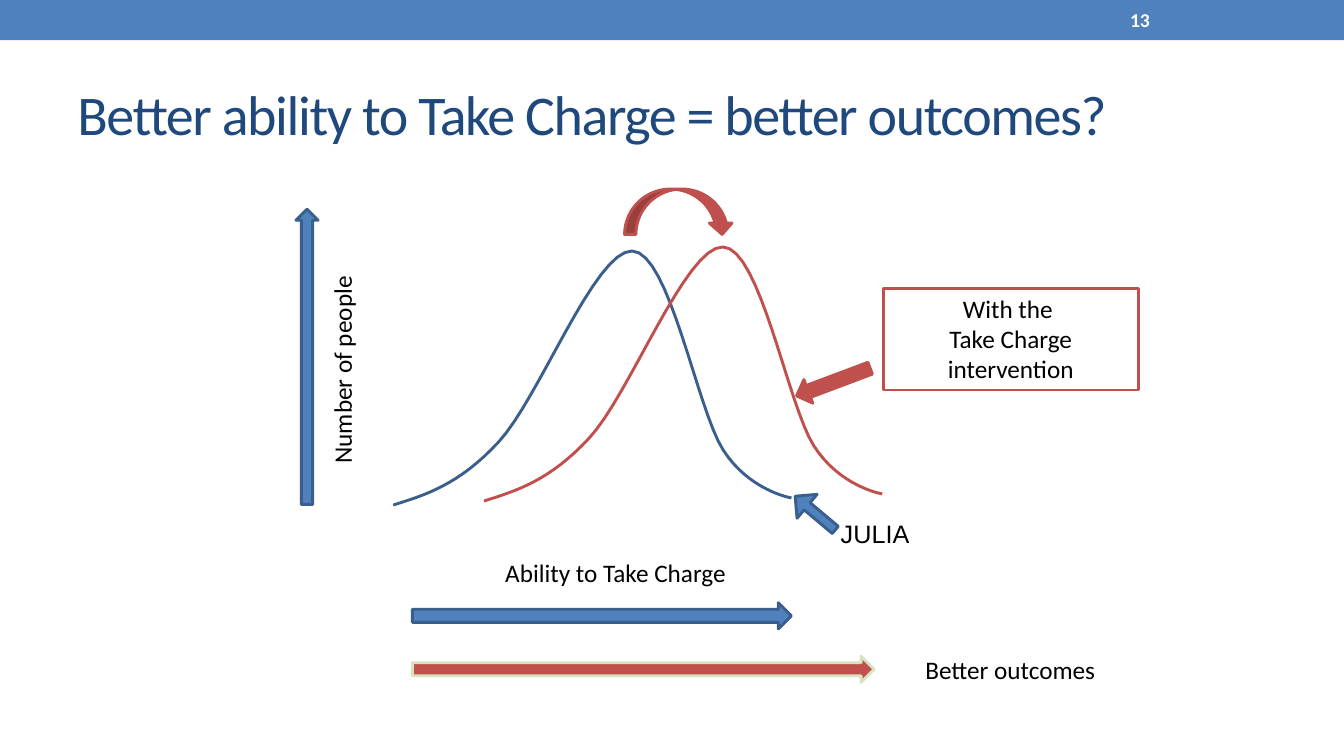
from dataclasses import dataclass

from pptx import Presentation
from pptx.dml.color import RGBColor as Rgb
from pptx.enum.shapes import MSO_SHAPE as Kind
from pptx.enum.text import MSO_ANCHOR as Anchor, PP_ALIGN as Align
from pptx.util import Inches, Pt

BLUE, NAVY, RED, LIME = "4F81BD", "3A5F8C", "C0504D", "D7E4BD"
BLACK, WHITE, TITLE = "000000", "FFFFFF", "1F497D"
STEPS = 16
SHIFT = (0.9, -0.04)
BELL = [
    (3.9, 5.01), (4.22, 4.91), (4.55, 4.81), (4.94, 4.39),
    (5.34, 3.97), (5.9, 2.48), (6.27, 2.49),
    (6.64, 2.5), (6.91, 4.05), (7.17, 4.46),
    (7.43, 4.87), (7.85, 4.94), (7.85, 4.94),
]

Box = tuple[float, float, float, float]
Point = tuple[float, float]


@dataclass
class Arrow:
    kind: Kind
    box: Box
    fill: str
    line: str
    turn: float = 0
    bend: tuple[float, ...] = ()


@dataclass
class Label:
    box: Box
    lines: tuple[str, ...]
    align: Align = Align.LEFT
    font: str = "Calibri"
    size: float = 18
    color: str = BLACK
    bold: bool = False
    turn: float = 0
    anchor: Anchor = Anchor.TOP
    track: int = 0
    edge: str = ""


ARROWS = [
    Arrow(Kind.RIGHT_ARROW, (4.09, 5.98, 3.76, 0.26), BLUE, NAVY),
    Arrow(Kind.DOWN_ARROW, (8.14, 3.4, 0.25, 0.78), RED, RED, 69.4),
    Arrow(Kind.RIGHT_ARROW, (4.09, 6.51, 4.58, 0.26), RED, LIME),
    Arrow(Kind.CURVED_LEFT_ARROW, (6.51, 1.56, 0.45, 1.08), RED, RED, 270),
    Arrow(Kind.RIGHT_ARROW, (1.58, 3.43, 2.93, 0.22), BLUE, NAVY, 270),
    Arrow(Kind.DOWN_ARROW, (7.93, 4.83, 0.31, 0.52), BLUE, NAVY, 130, (0.3, 0.5)),
]
LABELS = [
    Label((0.67, 0.58, 12, 1.08), ("Better ability to Take Charge = better outcomes?",),
          size=40, color=TITLE, anchor=Anchor.MIDDLE, track=-100),
    Label((4.57, 5.48, 3.07, 0.4), ("Ability to Take Charge",), Align.CENTER),
    Label((8.76, 2.86, 2.53, 1.01), ("With the ", "Take Charge intervention"),
          Align.CENTER, edge=RED),
    Label((9.08, 6.44, 2.21, 0.4), ("Better outcomes",)),
    Label((11.11, 0.02, 1.56, 0.36), ("13",), size=14, color=WHITE, bold=True,
          anchor=Anchor.MIDDLE),
    Label((2.04, 3.47, 2.7, 0.4), ("Number of people",), Align.CENTER, turn=270),
    Label((8.24, 5.09, 1.28, 0.4), ("JULIA",), font="Arial"),
]


def paint(hue: str) -> Rgb:
    return Rgb.from_string(hue)


def place(box: Box) -> list[Inches]:
    return [Inches(side) for side in box]


def stroke(shape, hue: str, width: float = 2.08) -> None:
    shape.line.color.rgb = paint(hue)
    shape.line.width = Pt(width)


def trace(knots: list[Point]) -> list[Point]:
    spots = [knots[0]]
    for start in range(0, len(knots) - 1, 3):
        a, b, c, d = knots[start:start + 4]
        for step in range(1, STEPS + 1):
            t = step / STEPS
            u = 1 - t
            spots.append(tuple(
                u**3 * p + 3 * u * u * t * q + 3 * u * t * t * r + t**3 * s
                for p, q, r, s in zip(a, b, c, d)
            ))
    return spots


def draw_curve(slide, hue: str, shift: Point) -> None:
    spots = [(Inches(x + shift[0]), Inches(y + shift[1])) for x, y in trace(BELL)]
    pen = slide.shapes.build_freeform(*spots[0])
    pen.add_line_segments(spots[1:], close=False)
    curve = pen.convert_to_shape()
    curve.shadow.inherit = False
    curve.fill.background()
    stroke(curve, hue)


def draw_arrow(slide, item: Arrow) -> None:
    shape = slide.shapes.add_shape(item.kind, *place(item.box))
    shape.shadow.inherit = False
    shape.rotation = item.turn
    for spot, value in enumerate(item.bend):
        shape.adjustments[spot] = value
    shape.fill.solid()
    shape.fill.fore_color.rgb = paint(item.fill)
    stroke(shape, item.line)


def draw_label(slide, item: Label) -> None:
    shape = slide.shapes.add_textbox(*place(item.box))
    shape.rotation = item.turn
    if item.edge:
        stroke(shape, item.edge, 2)
    frame = shape.text_frame
    frame.word_wrap = True
    frame.vertical_anchor = item.anchor
    for spot, line in enumerate(item.lines):
        para = frame.add_paragraph() if spot else frame.paragraphs[0]
        para.alignment = item.align
        run = para.add_run()
        run.text = line
        font = run.font
        font.name = item.font
        font.size = Pt(item.size)
        font.bold = item.bold
        font.color.rgb = paint(item.color)
        if item.track:
            run._r.get_or_add_rPr().set("spc", str(item.track))


def main() -> None:
    deck = Presentation()
    deck.slide_width, deck.slide_height = Inches(13.33), Inches(7.5)
    slide = deck.slides.add_slide(deck.slide_layouts[6])
    band = slide.shapes.add_shape(Kind.RECTANGLE, *place((0, 0, 13.33, 0.4)))
    band.shadow.inherit = False
    band.fill.solid()
    band.fill.fore_color.rgb = paint(BLUE)
    band.line.fill.background()
    draw_curve(slide, NAVY, (0, 0))
    draw_curve(slide, RED, SHIFT)
    for arrow in ARROWS:
        draw_arrow(slide, arrow)
    for label in LABELS:
        draw_label(slide, label)
    deck.save("out.pptx")


if __name__ == "__main__":
    main()
